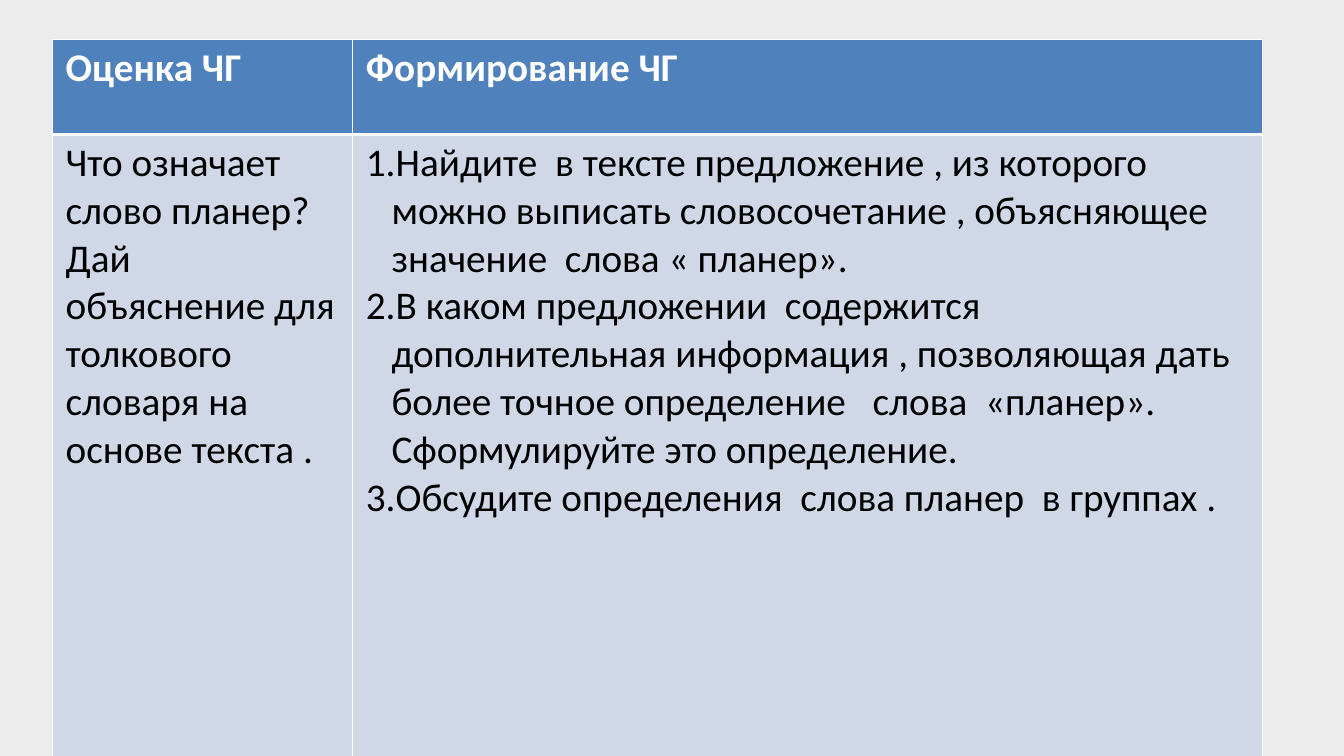
"""Build a slide with a table comparing assessment and development of reading literacy."""
from lxml import etree
from pptx import Presentation
from pptx.dml.color import RGBColor
from pptx.oxml.ns import qn
from pptx.util import Cm, Pt

COLORS = {"background": "ECECEC", "header": "4F81BD", "body": "D0D8E8",
          "white": "FFFFFF", "black": "000000"}
FONT = "Calibri"
FONT_SIZE = Pt(42)
COLUMN_WIDTHS = [11.35, 34.37]
ROW_HEIGHTS = [3.58, 23.5]
BLANK_LAYOUT = 6

ROWS = [
    [["Оценка ЧГ"], ["Формирование ЧГ"]],
    [
        ["Что означает слово планер? Дай объяснение для толкового словаря на основе текста ."],
        [
            "Найдите  в тексте предложение , из которого можно выписать словосочетание , "
            "объясняющее значение  слова « планер».",
            "В каком предложении  содержится  дополнительная информация , позволяющая дать "
            "более точное определение   слова  «планер». Сформулируйте это определение.",
            "Обсудите определения  слова планер  в группах .",
        ],
    ],
]


def set_borders(cell, widths):
    properties = cell._tc.get_or_add_tcPr()
    for position, (side, width) in enumerate(widths.items()):
        line = etree.Element(qn(f"a:ln{side}"), w=str(Pt(width)))
        fill = etree.SubElement(line, qn("a:solidFill"))
        etree.SubElement(fill, qn("a:srgbClr"), val=COLORS["white"])
        properties.insert(position, line)


def number_paragraph(paragraph):
    properties = paragraph._p.get_or_add_pPr()
    properties.set("marL", str(Cm(0.97)))
    properties.set("indent", str(-Cm(0.97)))
    etree.SubElement(properties, qn("a:buFont"), typeface="+mj-lt")
    etree.SubElement(properties, qn("a:buAutoNum"), type="arabicPeriod")


presentation = Presentation()
presentation.slide_width = Cm(50.8)
presentation.slide_height = Cm(28.575)
slide = presentation.slides.add_slide(presentation.slide_layouts[BLANK_LAYOUT])
slide.background.fill.solid()
slide.background.fill.fore_color.rgb = RGBColor.from_string(COLORS["background"])

table = slide.shapes.add_table(
    len(ROWS), len(COLUMN_WIDTHS), Cm(1.98), Cm(1.5),
    Cm(sum(COLUMN_WIDTHS)), Cm(sum(ROW_HEIGHTS))).table
for column, width in zip(table.columns, COLUMN_WIDTHS):
    column.width = Cm(width)
for row, height in zip(table.rows, ROW_HEIGHTS):
    row.height = Cm(height)

for row_index, row_texts in enumerate(ROWS):
    is_header = row_index == 0
    for column_index, texts in enumerate(row_texts):
        cell = table.cell(row_index, column_index)
        cell.margin_left = cell.margin_right = Cm(0.5)
        cell.margin_top = cell.margin_bottom = Cm(0.18)
        cell.fill.solid()
        cell.fill.fore_color.rgb = RGBColor.from_string(COLORS["header" if is_header else "body"])
        set_borders(cell, {"L": 1, "R": 1, "T": 1 if is_header else 3, "B": 3 if is_header else 1})
        cell.text_frame.text = "\n".join(texts)
        for paragraph in cell.text_frame.paragraphs:
            if len(texts) > 1:
                number_paragraph(paragraph)
            font = paragraph.runs[0].font
            font.name = FONT
            font.size = FONT_SIZE
            font.bold = is_header
            font.color.rgb = RGBColor.from_string(COLORS["white" if is_header else "black"])

presentation.save("out.pptx")
